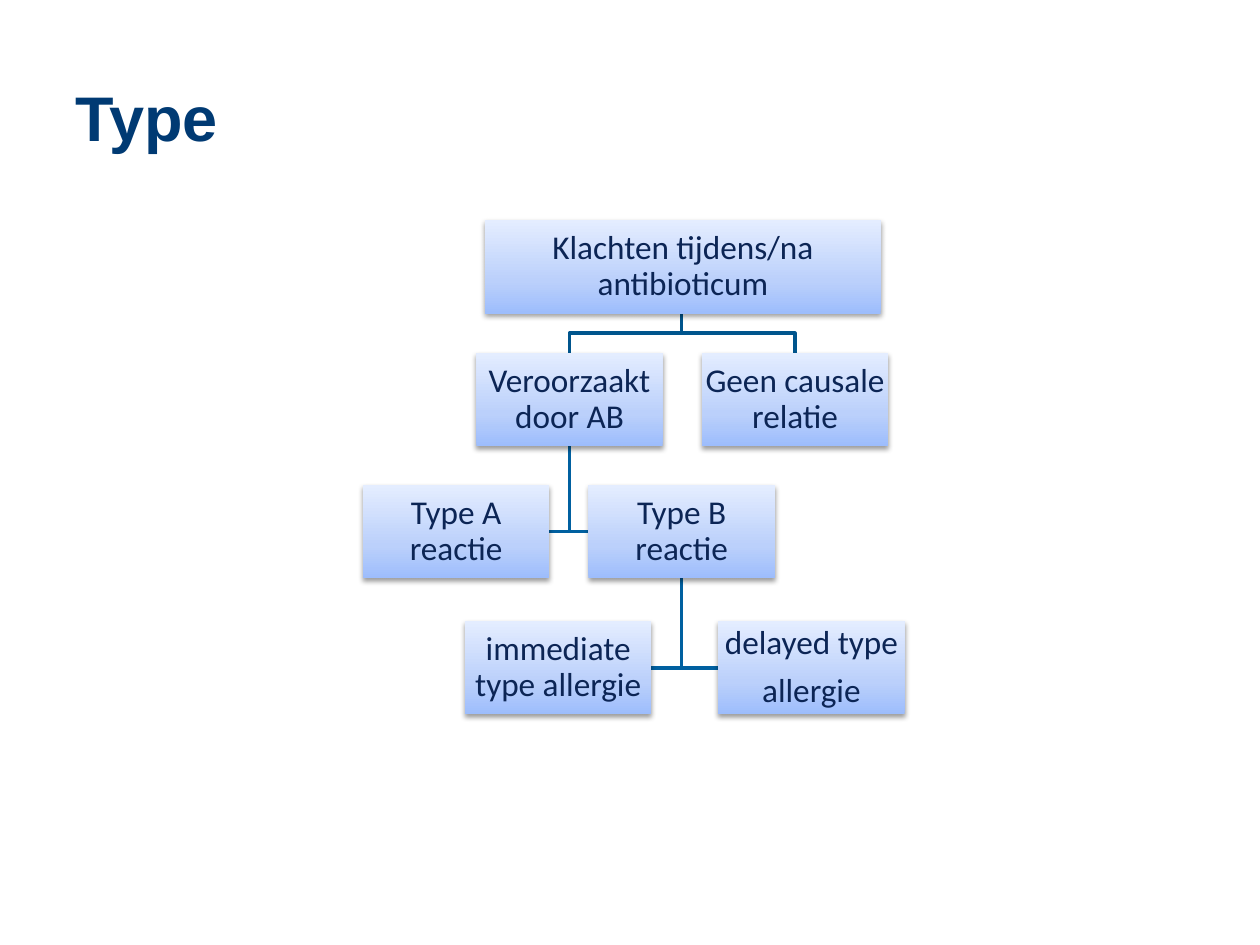
from pptx import Presentation
from pptx.dml.color import RGBColor
from pptx.enum.shapes import MSO_SHAPE as Shape
from pptx.enum.text import MSO_ANCHOR as Anchor, PP_ALIGN as Align
from pptx.oxml import parse_xml
from pptx.oxml.ns import nsdecls, qn
from pptx.util import Inches, Pt


def color(value):
    return RGBColor.from_string(value)


deck = Presentation()
deck.slide_width, deck.slide_height = Inches(10), Inches(7.5)
page = deck.slides.add_slide(deck.slide_layouts[5])

# Title
title = page.shapes.title
title.left, title.top = Inches(0.5), Inches(0.3)
title.width, title.height = Inches(9), Inches(1.25)
title.text_frame.vertical_anchor = Anchor.MIDDLE
para = title.text_frame.paragraphs[0]
para.alignment = Align.LEFT
span = para.add_run()
span.text = "Type"
span.font.name, span.font.size, span.font.bold = "Arial", Pt(36), True
span.font.color.rgb = color("003A73")

# Tree measurements: row tops, box size, and the stems that branches hang from
row_tops = [1.75, 2.8, 3.85, 4.93]
box_width, box_height = 1.48, 0.74
root_x, cause_x, no_cause_x = 5.41, 4.52, 6.31
row_bottoms = [top + box_height for top in row_tops]
row_middles = [top + box_height / 2 for top in row_tops]
fork_y = (row_bottoms[0] + row_tops[1]) / 2

# Branch lines, drawn behind the boxes
branches = []
for child_x in (cause_x, no_cause_x):
    branches.append(("00558D", [(root_x, row_bottoms[0]), (root_x, fork_y),
                                (child_x, fork_y), (child_x, row_tops[1])]))
for stem_x, row, side_xs in ((cause_x, 1, (4.36, 4.67)), (root_x, 2, (5.17, 5.7))):
    for side_x in side_xs:
        branches.append(("0060A0", [(stem_x, row_bottoms[row]),
                                    (stem_x, row_middles[row + 1]),
                                    (side_x, row_middles[row + 1])]))
for line_color, points in branches:
    points = [(Inches(x), Inches(y)) for x, y in points]
    builder = page.shapes.build_freeform(*points[0])
    builder.add_line_segments(points[1:], close=False)
    branch = builder.convert_to_shape()
    branch.shadow.inherit = False
    branch.fill.background()
    branch.line.color.rgb = color(line_color)
    branch.line.width = Pt(2)

# Boxes: left, row, width, paragraphs
boxes = [
    (3.85, 0, 3.14, ["Klachten tijdens/na antibioticum"]),
    (3.78, 1, box_width, ["Veroorzaakt door AB"]),
    (5.57, 1, box_width, ["Geen causale relatie"]),
    (2.88, 2, box_width, ["Type A reactie"]),
    (4.67, 2, box_width, ["Type B reactie"]),
    (3.69, 3, box_width, ["immediate type allergie"]),
    (5.7, 3, box_width, ["delayed type", "allergie"]),
]
gradient_stops = "".join(
    f'<a:gs pos="{percent * 1000}"><a:srgbClr val="{stop}"/></a:gs>'
    for percent, stop in ((0, "9DBDFC"), (35, "BBD0FB"), (100, "E4EDFF")))
for left, row, width, lines in boxes:
    box = page.shapes.add_shape(Shape.RECTANGLE, Inches(left), Inches(row_tops[row]),
                                Inches(width), Inches(box_height))
    box.line.fill.background()
    box.shadow.inherit = False

    # Upward gradient and soft shadow below
    properties = box._element.spPr
    properties.find(qn("a:ln")).addprevious(parse_xml(
        f'<a:gradFill {nsdecls("a")} rotWithShape="1"><a:gsLst>{gradient_stops}</a:gsLst>'
        '<a:lin ang="16200000" scaled="0"/></a:gradFill>'))
    properties.find(qn("a:effectLst")).append(parse_xml(
        f'<a:outerShdw {nsdecls("a")} blurRad="{Pt(3.1)}" dist="{Pt(1.6)}" dir="5400000" '
        'rotWithShape="0"><a:srgbClr val="000000"><a:alpha val="38000"/></a:srgbClr>'
        '</a:outerShdw>'))

    frame = box.text_frame
    frame.word_wrap = True
    frame.vertical_anchor = Anchor.MIDDLE
    frame.margin_left = frame.margin_right = Inches(0.01)
    frame.margin_top = frame.margin_bottom = Inches(0.01)
    for index, line in enumerate(lines):
        para = frame.add_paragraph() if index else frame.paragraphs[0]
        para.alignment = Align.CENTER
        para.line_spacing = 0.9
        para.space_after = Pt(6.65)
        span = para.add_run()
        span.text = line
        span.font.name, span.font.size = "Calibri", Pt(19)
        span.font.color.rgb = color("0C2555")

deck.save("out.pptx")
